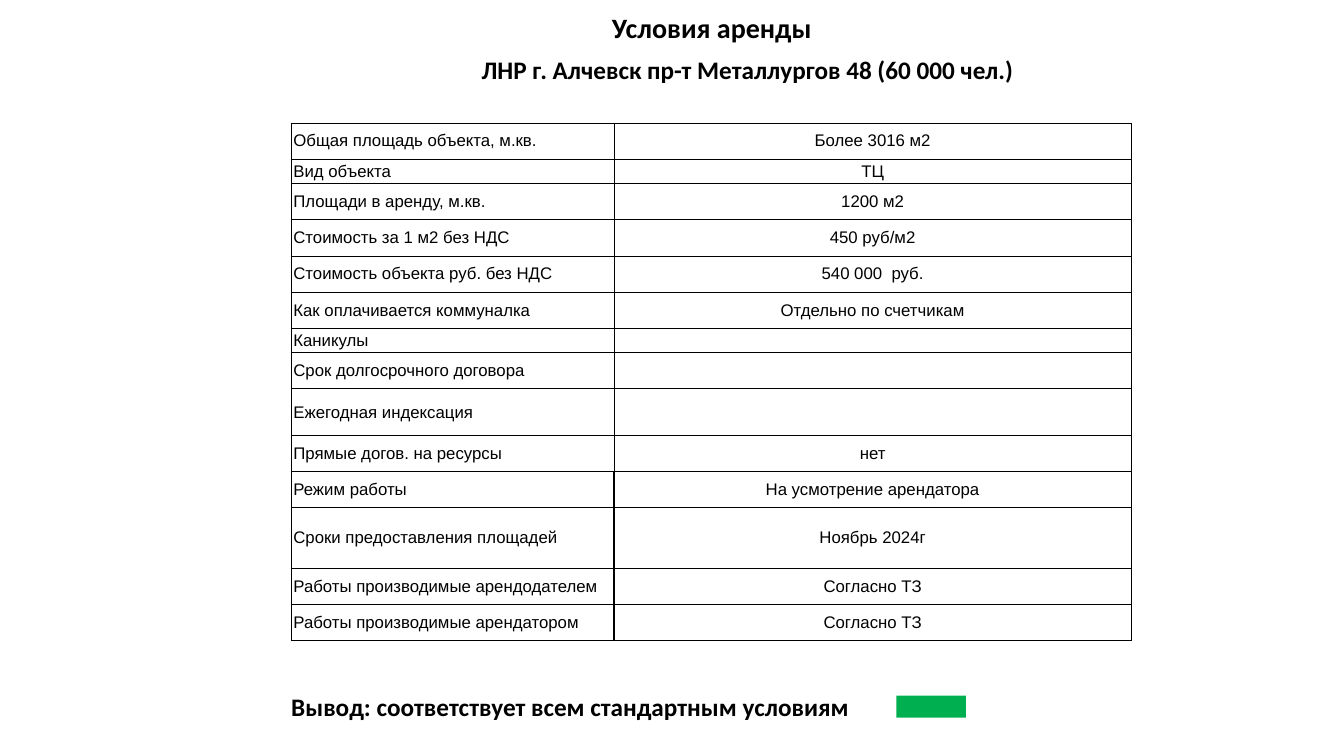
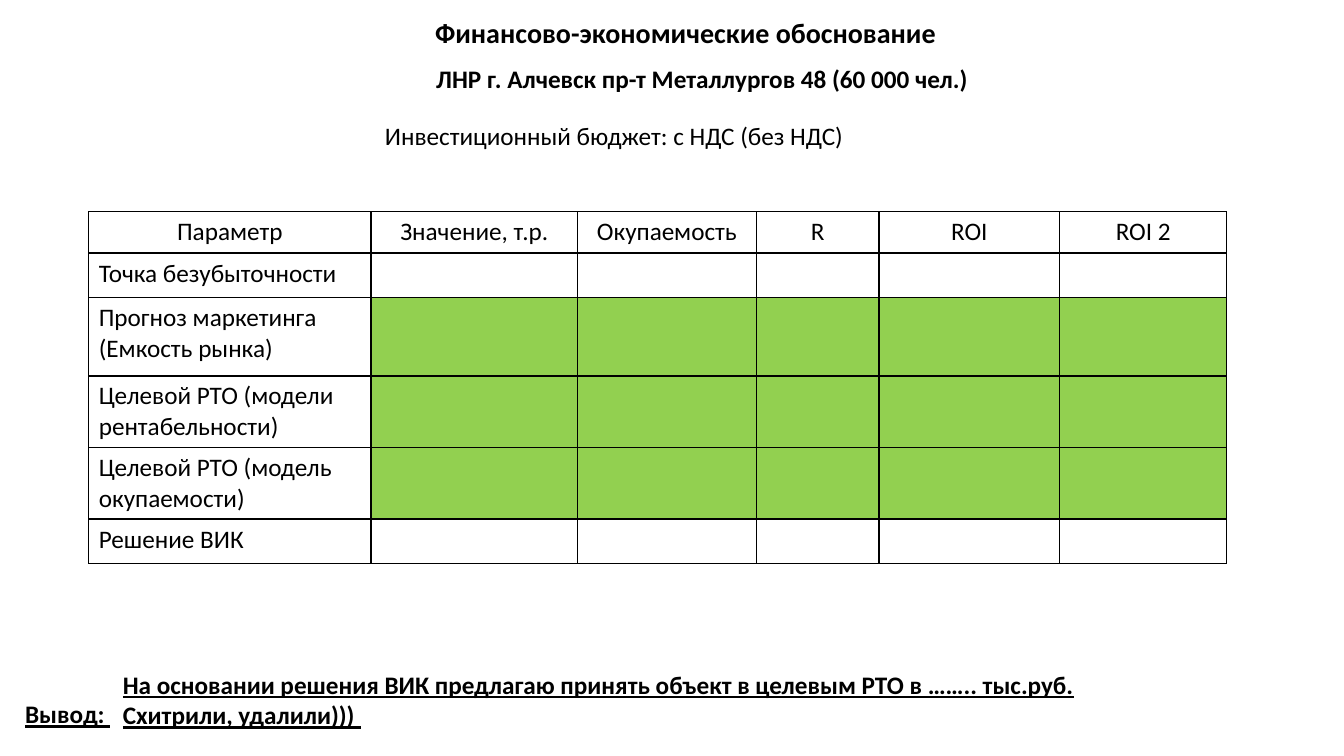
import pptx
import pptx.util
import pptx.dml.color
import pptx.enum.text
import pptx.enum.shapes
import pptx.oxml
import pptx.oxml.ns
import lxml.etree

Inch = pptx.util.Inches
Pt = pptx.util.Pt
Align = pptx.enum.text.PP_ALIGN
Anchor = pptx.enum.text.MSO_ANCHOR
qn = pptx.oxml.ns.qn

HUES = {"ink": "000000", "paper": "FFFFFF", "mark": "00B050", "lime": "92D050"}
FONTS = {
    "title": {"name": "Calibri", "size": Pt(20), "bold": True},
    "bold": {"name": "Calibri", "size": Pt(18), "bold": True},
    "line": {"name": "Calibri", "size": Pt(18), "bold": True, "underline": True},
    "plain": {"name": "Calibri", "size": Pt(18), "bold": False},
    "small": {"name": "Arial", "size": Pt(12), "bold": False},
}
PLACE = "ЛНР г. Алчевск пр-т Металлургов 48 (60 000 чел.)"

TERMS = [
    ("Общая площадь объекта, м.кв.", "Более 3016 м2"),
    ("Вид объекта", "ТЦ"),
    ("Площади в аренду, м.кв.", "1200 м2"),
    ("Стоимость за 1 м2 без НДС", "450 руб/м2"),
    ("Стоимость объекта руб. без НДС", "540 000  руб."),
    ("Как оплачивается коммуналка", "Отдельно по счетчикам"),
    ("Каникулы", ""),
    ("Срок долгосрочного договора", ""),
    ("Ежегодная индексация", ""),
    ("Прямые догов. на ресурсы", "нет"),
    ("Режим работы", "На усмотрение арендатора"),
    ("Сроки предоставления площадей", "Ноябрь 2024г"),
    ("Работы производимые арендодателем", "Согласно ТЗ"),
    ("Работы производимые арендатором", "Согласно ТЗ"),
]
HEADS = ("Параметр", "Значение, т.р.", "Окупаемость", "R", "ROI", "ROI 2")
GOALS = [
    "Точка безубыточности",
    "Прогноз маркетинга (Емкость рынка)",
    "Целевой РТО (модели рентабельности)",
    "Целевой РТО (модель окупаемости)",
    "Решение ВИК",
]
GRID = [HEADS] + [(goal,) + ("",) * (len(HEADS) - 1) for goal in GOALS]

SLIDES = [
    {
        "title": ("Условия аренды", (4.27, 0.05, 5.58, 0.44)),
        "texts": [
            (PLACE, (4.17, 0.49, 5.98, 0.4), "bold", Align.RIGHT),
            ("Вывод: соответствует всем стандартным условиям",
             (2.79, 6.81, 6.69, 0.4), "bold", Align.LEFT),
        ],
        "marks": [(8.89, 6.9, 0.69, 0.22)],
        "table": {
            "cells": TERMS,
            "at": (2.89, 1.22),
            "cols": [3.2, 5.13],
            "rows": [{1: 0.24, 6: 0.24, 8: 0.46, 11: 0.6}.get(i, 0.36)
                     for i in range(len(TERMS))],
            "font": "small",
            "heads": 0,
            "lime": (),
            "thick": 10,
            "form": {"vertical_anchor": Anchor.MIDDLE,
                     "margin_left": Inch(0.02), "margin_right": Inch(0.02),
                     "margin_top": Inch(0.01), "margin_bottom": Inch(0.01)},
        },
    },
    {
        "title": ("Финансово-экономические обоснование", (2.4, 0.1, 8.8, 0.44)),
        "texts": [
            (PLACE, (3.72, 0.58, 5.98, 0.4), "bold", Align.RIGHT),
            ("Инвестиционный бюджет: с НДС (без НДС)",
             (3.72, 1.14, 6.56, 0.4), "plain", Align.LEFT),
            ("Вывод: ", (0.15, 6.88, 9.42, 0.61), "line", Align.LEFT),
            ("На основании решения ВИК предлагаю принять объект в целевым РТО "
             "в …….. тыс.руб. Схитрили, удалили))) ",
             (1.12, 6.59, 10.52, 0.91), "line", Align.LEFT),
        ],
        "marks": [],
        "table": {
            "cells": GRID,
            "at": (0.88, 2.1),
            "cols": [2.8, 2.05, 1.77, 1.22, 1.79, 1.66],
            "rows": [0.41, 0.44, 0.78, 0.71, 0.71, 0.44],
            "font": "plain",
            "heads": 1,
            "lime": (2, 3, 4),
            "thick": 0,
            "form": {"vertical_anchor": Anchor.TOP},
        },
    },
]


def hue(name):
    return pptx.dml.color.RGBColor.from_string(HUES[name])


def apply(thing, form):
    for key, value in form.items():
        setattr(thing, key, value)


def write(frame, text, font, align):
    para = frame.paragraphs[0]
    para.alignment = align
    if text:
        run = para.add_run()
        run.text = text
        apply(run.font, FONTS[font])
        run.font.color.rgb = hue("ink")
    else:
        size = str(int(FONTS[font]["size"].pt * 100))
        lxml.etree.SubElement(para._p, qn("a:endParaRPr"), sz=size)


def border(cell, width):
    props = cell._tc.get_or_add_tcPr()
    for side in ("lnL", "lnR", "lnT", "lnB"):
        line = lxml.etree.SubElement(props, qn("a:" + side), w=str(Pt(width)))
        fill = lxml.etree.SubElement(line, qn("a:solidFill"))
        lxml.etree.SubElement(fill, qn("a:srgbClr"), val=HUES["ink"])


def add_title(slide, text, box):
    shape = slide.shapes.title
    apply(shape, dict(zip(("left", "top", "width", "height"), map(Inch, box))))
    apply(shape.text_frame, {"word_wrap": True, "vertical_anchor": Anchor.TOP,
                             "auto_size": pptx.enum.text.MSO_AUTO_SIZE.NONE})
    write(shape.text_frame, text, "title", Align.CENTER)


def add_text(slide, text, box, font, align):
    frame = slide.shapes.add_textbox(*map(Inch, box)).text_frame
    frame.word_wrap = True
    write(frame, text, font, align)


def add_mark(slide, box):
    kind = pptx.enum.shapes.MSO_SHAPE.RECTANGLE
    shape = slide.shapes.add_shape(kind, *map(Inch, box))
    shape.shadow.inherit = False
    shape.fill.solid()
    shape.fill.fore_color.rgb = hue("mark")
    shape.line.fill.background()


def add_grid(slide, data):
    cols, rows = data["cols"], data["rows"]
    size = (*data["at"], sum(cols), sum(rows))
    table = slide.shapes.add_table(len(rows), len(cols), *map(Inch, size)).table
    apply(table, {"first_row": False, "horz_banding": False})
    for col, width in zip(table.columns, cols):
        col.width = Inch(width)
    for row, height in zip(table.rows, rows):
        row.height = Inch(height)
    for i, line in enumerate(data["cells"]):
        for j, text in enumerate(line):
            cell = table.cell(i, j)
            apply(cell, data["form"])
            border(cell, 1 if i >= data["thick"] else 0.75)
            cell.fill.solid()
            lime = j > 0 and i in data["lime"]
            cell.fill.fore_color.rgb = hue("lime" if lime else "paper")
            mid = j > 0 or i < data["heads"]
            write(cell.text_frame, text, data["font"],
                  Align.CENTER if mid else Align.LEFT)


def main():
    deck = pptx.Presentation()
    apply(deck, {"slide_width": Inch(13.33), "slide_height": Inch(7.5)})
    for page in SLIDES:
        slide = deck.slides.add_slide(deck.slide_layouts[5])
        add_title(slide, *page["title"])
        for item in page["texts"]:
            add_text(slide, *item)
        for box in page["marks"]:
            add_mark(slide, box)
        add_grid(slide, page["table"])
    deck.save("out.pptx")


if __name__ == "__main__":
    main()
